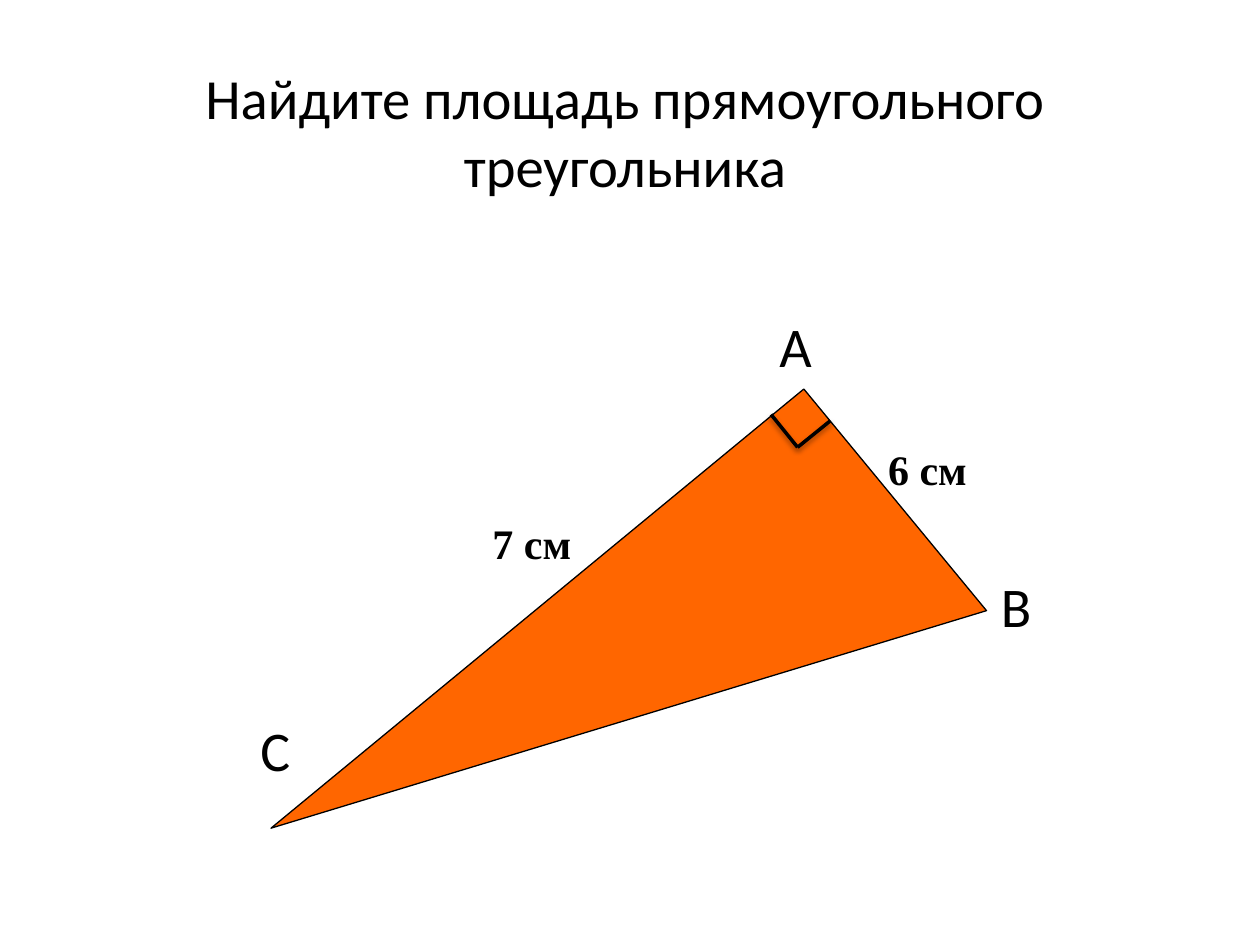
from lxml import etree
from pptx import Presentation
from pptx.dml.color import RGBColor
from pptx.enum.shapes import MSO_CONNECTOR, MSO_SHAPE
from pptx.enum.text import MSO_ANCHOR, MSO_AUTO_SIZE, PP_ALIGN
from pptx.oxml import parse_xml
from pptx.util import Inches, Pt

LEFT, CENTER = PP_ALIGN.LEFT, PP_ALIGN.CENTER
TOP, MIDDLE = MSO_ANCHOR.TOP, MSO_ANCHOR.MIDDLE
BLACK, ORANGE = "000000", "FF6600"

# Content: text and box (left, top, width, height) in inches
TITLE = ("Найдите площадь прямоугольного треугольника", (0.75, 0.46, 8.42, 1.16))
SIDES = [
    ("7 см", (3.81, 4.06, 0.83, 0.5)),
    ("6 см", (6.95, 3.47, 1, 0.5)),
]
VERTICES = [
    ("C", (1.95, 5.63, 0.47, 0.64)),
    ("A", (6.05, 2.42, 0.53, 0.64)),
    ("B", (7.82, 4.49, 0.49, 0.64)),
]
TRIANGLE = (2.25, 4.57, 5.48, 2.28)
ROTATION = 140.5
# Right-angle mark: two ends on the legs, meeting at one corner
MARK_ENDS = [(6.59, 3.34), (6.12, 3.29)]
MARK_CORNER = (6.33, 3.55)

SHADOW = (
    '<a:effectLst xmlns:a="http://schemas.openxmlformats.org/drawingml/2006/main">'
    '<a:outerShdw blurRad="%d" dist="%d" dir="5400000" rotWithShape="0">'
    '<a:srgbClr val="000000"><a:alpha val="38000"/></a:srgbClr>'
    '</a:outerShdw></a:effectLst>' % (Pt(3.1), Pt(1.6))
)


def rgb(value):
    return RGBColor.from_string(value)


def add_text(s, text, box, size=32, font="Calibri", bold=False,
             align=CENTER, anchor=TOP, wrap=False, grow=True):
    tf = s.shapes.add_textbox(*map(Inches, box)).text_frame
    tf.word_wrap = wrap
    tf.auto_size = MSO_AUTO_SIZE.SHAPE_TO_FIT_TEXT if grow else MSO_AUTO_SIZE.NONE
    tf.vertical_anchor = anchor
    p = tf.paragraphs[0]
    p.alignment = align
    r = p.add_run()
    r.text = text
    r.font.name, r.font.size, r.font.bold = font, Pt(size), bold
    r.font.color.rgb = rgb(BLACK)


def add_line(s, start, end):
    line = s.shapes.add_connector(MSO_CONNECTOR.STRAIGHT, *map(Inches, start + end))
    line.line.color.rgb = rgb(BLACK)
    line.line.width = Pt(2)
    line._element.spPr.append(parse_xml(SHADOW))


prs = Presentation()
prs.slide_width, prs.slide_height = Inches(10), Inches(7.5)
s = prs.slides.add_slide(prs.slide_layouts[6])

# Title and side lengths
add_text(s, *TITLE, size=32.4, anchor=MIDDLE, wrap=True, grow=False)
for text, box in SIDES:
    add_text(s, text, box, size=24, font="Times New Roman", bold=True,
             align=LEFT, wrap=True)

# Triangle
sp = s.shapes.add_shape(MSO_SHAPE.RIGHT_TRIANGLE, *map(Inches, TRIANGLE))
sp.rotation = ROTATION
sp.shadow.inherit = False
sp.fill.solid()
sp.fill.fore_color.rgb = rgb(ORANGE)
sp.line.color.rgb = rgb(BLACK)
sp.line.width = Pt(0.75)

# Right-angle mark
for end in MARK_ENDS:
    add_line(s, end, MARK_CORNER)

# Vertex names
for text, box in VERTICES:
    add_text(s, text, box)

prs.save("out.pptx")
